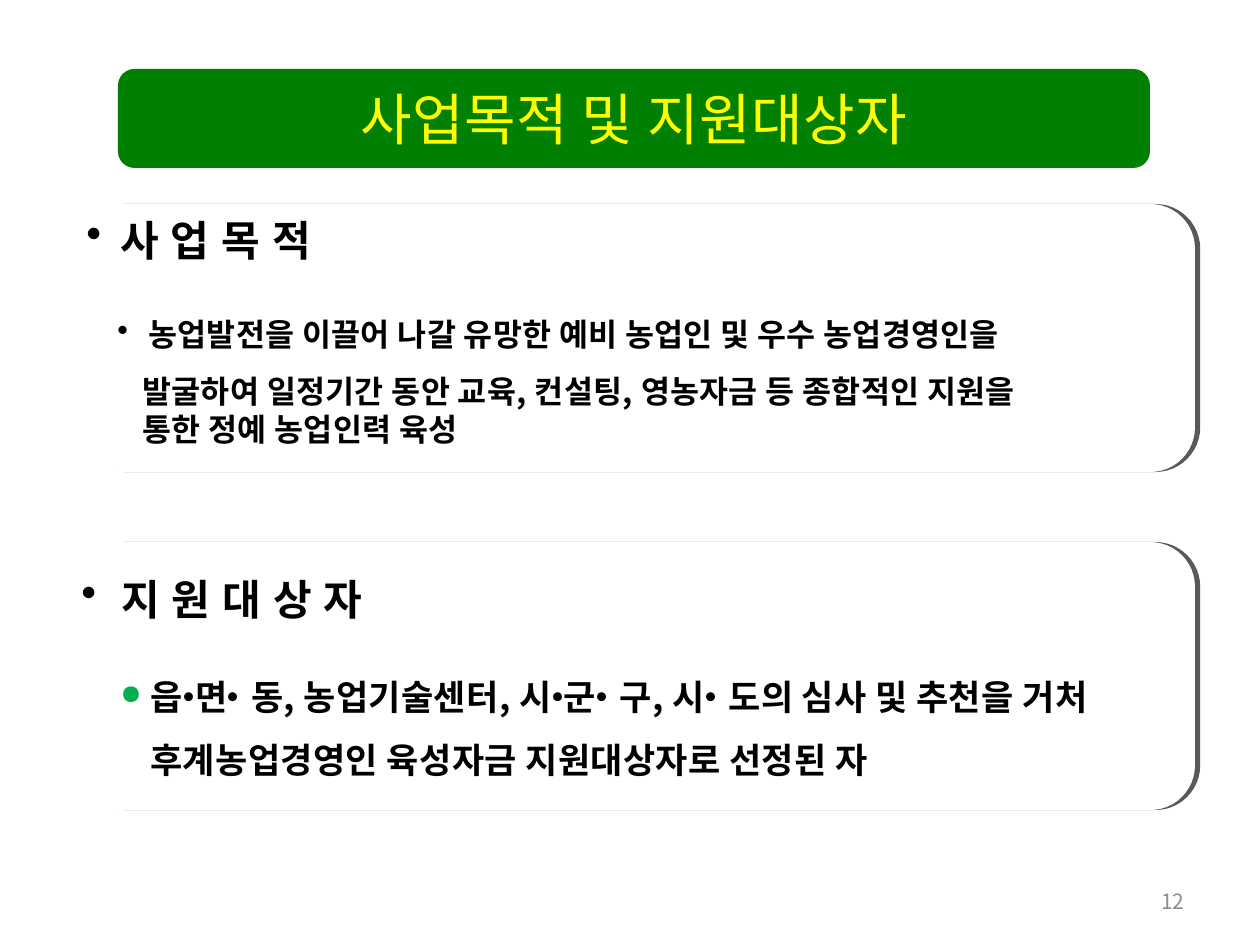
import itertools
import pptx
import pptx.util
import pptx.dml.color
import pptx.enum.shapes
import pptx.enum.text
import pptx.oxml
import pptx.oxml.ns

SLIDE = (1260, 945)
TITLE = ("사업목적 및 지원대상자", (118, 69, 1032, 99))
PAGE_NUMBER = ("12", (903, 876, 294, 50))
SECTIONS = [
    {
        "panel": (74, 204, 1121, 268),
        "heading": ("사 업 목 적", (74, 208, 413, 64), 34),
        "body_box": (105, 290, 1082, 171),
        "size": "purpose",
        "body": [
            {"text": "농업발전을 이끌어 나갈 유망한 예비 농업인 및 우수 농업경영인을",
             "spacing": 1.5, "bullet": "•", "indent": 31},
            {"text": "발굴하여 일정기간 동안 교육, 컨설팅, 영농자금 등 종합적인 지원을",
             "spacing": 1.5, "indent": 25},
            {"text": "통한 정예 농업인력 육성", "indent": 25},
        ],
    },
    {
        "panel": (74, 542, 1121, 268),
        "heading": ("지 원 대 상 자", (69, 567, 354, 64), 40),
        "body_box": (108, 648, 1087, 178),
        "size": "target",
        "body": [
            {"text": "읍•면•동, 농업기술센터, 시•군•구, 시•도의 심사 및 추천을 거처",
             "spacing": 1.5, "bullet": "●", "bullet_color": "00B050", "bullet_size": 77,
             "indent": 30},
            {"text": "후계농업경영인 육성자금 지원대상자로 선정된 자",
             "spacing": 1.5, "indent": 30},
        ],
    },
]
THEME = {
    "font": "Noto Sans CJK KR",
    "text": "000000", "title": "FFFF00", "banner": "008000",
    "panel": "FFFFFF", "edge": "595959", "number": "8C8C8C",
    "sizes": {"title": 32, "heading": 24, "purpose": 18, "target": 20, "number": 12},
    "tracking": {"title": 30, "heading": 70, "purpose": 20, "target": 20, "number": 0},
    "dot_tracking": -650,
}
ALIGN = pptx.enum.text.PP_ALIGN
MIDDLE = pptx.enum.text.MSO_ANCHOR.MIDDLE
ROUNDED = pptx.enum.shapes.MSO_SHAPE.ROUNDED_RECTANGLE


def px(length):
    return round(length * 914400 / 126)


def add_xml(parent, tag, **attributes):
    child = pptx.oxml.parse_xml(f'<a:{tag} {pptx.oxml.ns.nsdecls("a")}/>')
    for key, value in attributes.items():
        child.set(key, str(value))
    parent.append(child)
    return child


def tracked_parts(text, tracking):
    def tracking_at(index):
        return THEME["dot_tracking"] if "•" in text[index:index + 2] else tracking

    for value, indexes in itertools.groupby(range(len(text)), tracking_at):
        yield "".join(text[index] for index in indexes), value


def write(frame, text, size="heading", color=THEME["text"], bold=False, align=ALIGN.LEFT,
          spacing=None, bullet=None, bullet_color=None, bullet_size=100, indent=0):
    paragraph = frame.paragraphs[0]
    if paragraph.runs:
        paragraph = frame.add_paragraph()
    paragraph.alignment = align
    if spacing:
        paragraph.line_spacing = spacing
    properties = paragraph._p.get_or_add_pPr()
    properties.set("marL", str(px(indent)))
    properties.set("indent", str(-px(indent) if bullet else 0))
    if bullet_color:
        add_xml(add_xml(properties, "buClr"), "srgbClr", val=bullet_color)
    if bullet:
        add_xml(properties, "buSzPct", val=bullet_size * 1000)
        add_xml(properties, "buChar", char=bullet)
    for part, tracking in tracked_parts(text, THEME["tracking"][size]):
        run = paragraph.add_run()
        run.text = part
        run.font.name = THEME["font"]
        run.font.size = pptx.util.Pt(THEME["sizes"][size])
        run.font.bold = bold
        run.font.color.rgb = pptx.dml.color.RGBColor.from_string(color)
        run_properties = run._r.get_or_add_rPr()
        run_properties.set("spc", str(tracking))
        add_xml(run_properties, "ea", typeface=THEME["font"])


def add_frame(slide, box):
    frame = slide.shapes.add_textbox(*map(px, box)).text_frame
    frame.word_wrap = True
    return frame


def add_rounded(slide, box, color):
    rounded = slide.shapes.add_shape(ROUNDED, *map(px, box))
    rounded.fill.solid()
    rounded.fill.fore_color.rgb = pptx.dml.color.RGBColor.from_string(color)
    rounded.line.fill.background()
    rounded.shadow.inherit = False
    return rounded


def add_panel(slide, box):
    panel = add_rounded(slide, box, THEME["panel"])
    effects = panel._element.spPr.find(pptx.oxml.ns.qn("a:effectLst"))
    shadow = add_xml(effects, "outerShdw", blurRad=0, dist=pptx.util.Pt(3), dir=0,
                     algn="l", rotWithShape=0)
    add_xml(shadow, "srgbClr", val=THEME["edge"])


def add_title(slide):
    text, box = TITLE
    banner = add_rounded(slide, box, THEME["banner"])
    title = slide.shapes.title
    title.left, title.top, title.width, title.height = map(px, box)
    banner._element.addnext(title._element)
    title.text_frame.word_wrap = False
    title.text_frame.vertical_anchor = MIDDLE
    write(title.text_frame, text, size="title", color=THEME["title"], align=ALIGN.CENTER)


def main():
    deck = pptx.Presentation()
    deck.slide_width, deck.slide_height = map(px, SLIDE)
    slide = deck.slides.add_slide(deck.slide_layouts[5])
    for section in SECTIONS:
        add_panel(slide, section["panel"])
    for section in SECTIONS:
        heading, box, indent = section["heading"]
        write(add_frame(slide, box), heading, bold=True, bullet="•", bullet_size=105,
              indent=indent)
        body = add_frame(slide, section["body_box"])
        for line in section["body"]:
            write(body, size=section["size"], bold=True, **line)
    add_title(slide)
    number, box = PAGE_NUMBER
    footer = add_frame(slide, box)
    footer.vertical_anchor = MIDDLE
    write(footer, number, size="number", color=THEME["number"], align=ALIGN.RIGHT)
    deck.save("out.pptx")


if __name__ == "__main__":
    main()
